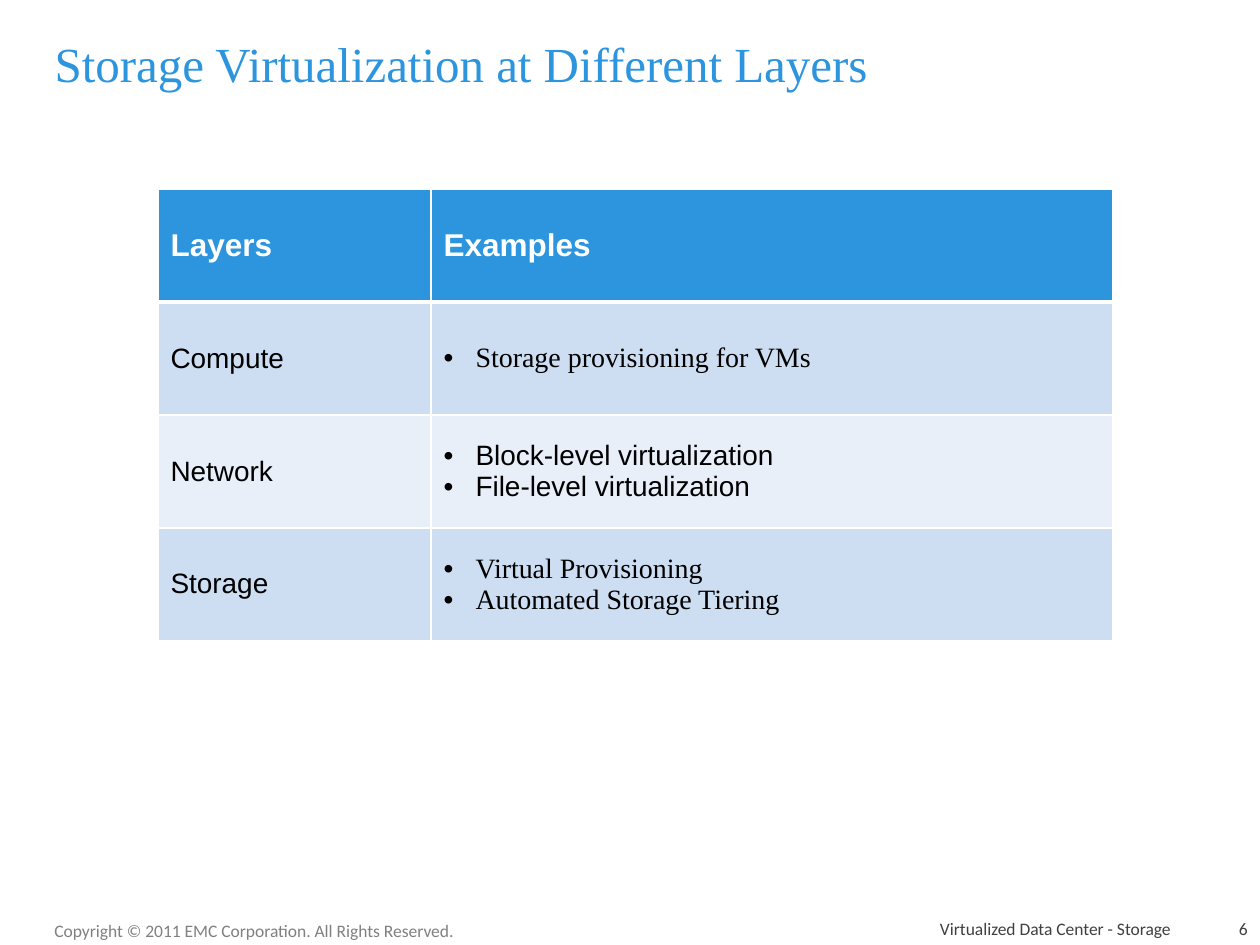
from lxml import etree
from pptx import Presentation
from pptx.dml.color import RGBColor
from pptx.enum.text import MSO_ANCHOR, PP_ALIGN
from pptx.oxml.ns import qn
from pptx.util import Pt

MID, LOW, TOP = MSO_ANCHOR.MIDDLE, MSO_ANCHOR.BOTTOM, MSO_ANCHOR.TOP
LEFT, RIGHT = PP_ALIGN.LEFT, PP_ALIGN.RIGHT
SCALE = 914400 / 126
HUES = {"blue": "2C95DD", "pale": "CDDDF2", "light": "E8EFF9", "white": "FFFFFF",
        "black": "000000", "gray": "808080", "dark": "404040"}
SANS, SERIF, FOOT = "Arial", "Times New Roman", "Calibri"


def px(*nums):
    return [round(n * SCALE) for n in nums]


def style(para, face, size, hue, bold=False):
    font = para.font
    font.name, font.size, font.bold = face, Pt(size), bold
    font.color.rgb = RGBColor.from_string(HUES[hue])


deck = Presentation()
deck.slide_width, deck.slide_height = px(1260, 945)
slide = deck.slides.add_slide(deck.slide_layouts[5])

title = slide.shapes.title
title.left, title.top, title.width, title.height = px(42, 10, 1166, 105)
frame = title.text_frame
frame.text = "Storage Virtualization at Different Layers"
frame.vertical_anchor = MID
frame.paragraphs[0].alignment = LEFT
style(frame.paragraphs[0], SERIF, 28, "blue")

feet = [
    ("Copyright © 2011 EMC Corporation. All Rights Reserved.", (42, 914, 431, 34), TOP, LEFT, "gray"),
    ("Virtualized Data Center - Storage", (609, 914, 574, 31), LOW, RIGHT, "dark"),
    ("6", (1197, 914, 63, 31), LOW, RIGHT, "dark"),
]
for text, area, anchor, align, hue in feet:
    frame = slide.shapes.add_textbox(*px(*area)).text_frame
    frame.word_wrap = True
    frame.vertical_anchor = anchor
    frame.text = text
    frame.paragraphs[0].alignment = align
    style(frame.paragraphs[0], FOOT, 10, hue)

rows = [
    ("Layers", ["Examples"], SANS, "blue"),
    ("Compute", ["Storage provisioning for VMs"], SERIF, "pale"),
    ("Network", ["Block-level virtualization", "File-level virtualization"], SANS, "light"),
    ("Storage", ["Virtual Provisioning", "Automated Storage Tiering"], SERIF, "pale"),
]
table = slide.shapes.add_table(len(rows), 2, *px(158, 189, 955, 452)).table
for col, width in zip(table.columns, px(273, 682)):
    col.width = width

for r, (layer, items, face, fill) in enumerate(rows):
    table.rows[r].height = px(113)[0]
    head = r == 0
    for c, lines in enumerate([[layer], items]):
        cell = table.cell(r, c)
        cell.vertical_anchor = MID
        props = cell._tc.get_or_add_tcPr()
        for side in "LRTB":
            thick = (side == "B" and r == 0) or (side == "T" and r == 1)
            line = etree.SubElement(props, qn(f"a:ln{side}"), w=str(Pt(3 if thick else 1)))
            solid = etree.SubElement(line, qn("a:solidFill"))
            etree.SubElement(solid, qn("a:srgbClr"), val=HUES["white"])
        cell.fill.solid()
        cell.fill.fore_color.rgb = RGBColor.from_string(HUES[fill])
        cell.text = "\n".join(lines)
        for para in cell.text_frame.paragraphs:
            if c and not head:
                pad = str(px(32)[0])
                form = para._p.get_or_add_pPr()
                form.set("marL", pad)
                form.set("indent", "-" + pad)
                etree.SubElement(form, qn("a:buFont"), typeface=SANS)
                etree.SubElement(form, qn("a:buChar"), char="•")
                tabs = etree.SubElement(form, qn("a:tabLst"))
                etree.SubElement(tabs, qn("a:tab"), pos=pad, algn="l")
            style(para, face if c else SANS, 18 if head else 16,
                  "white" if head else "black", head)

deck.save("out.pptx")
